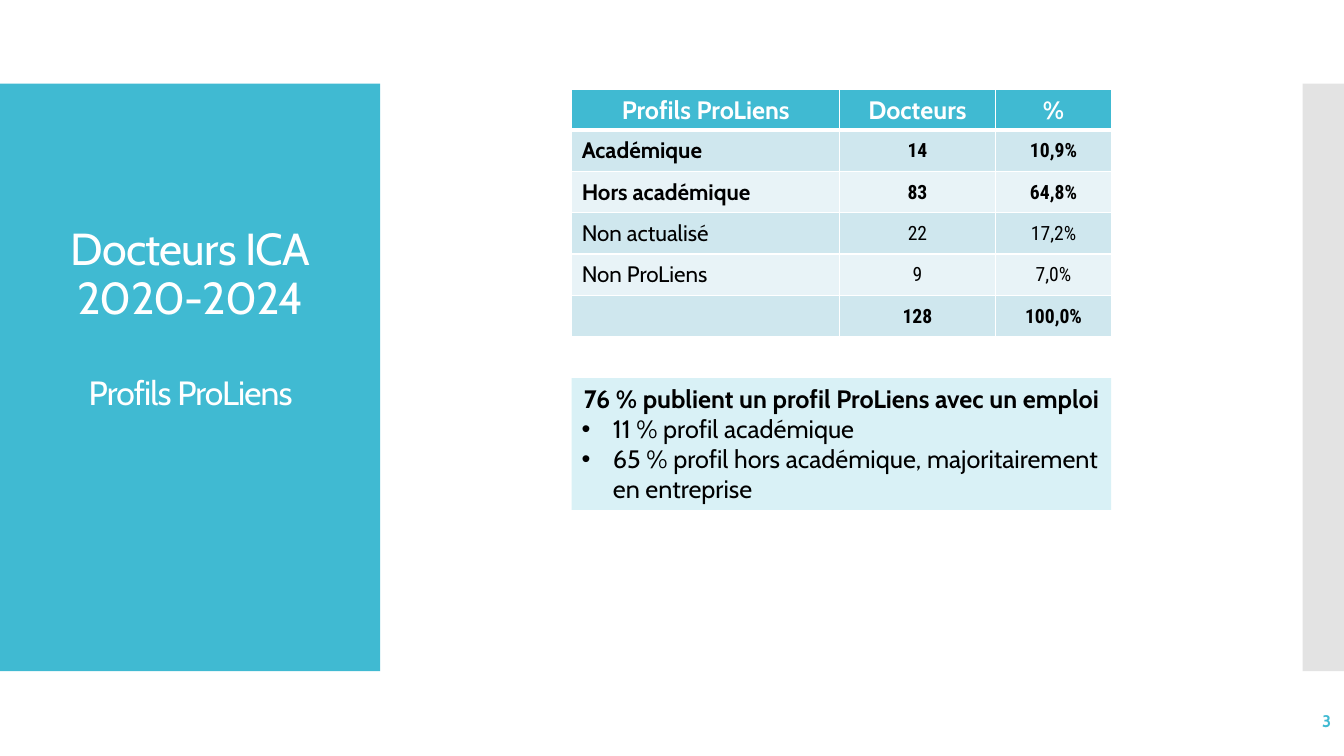
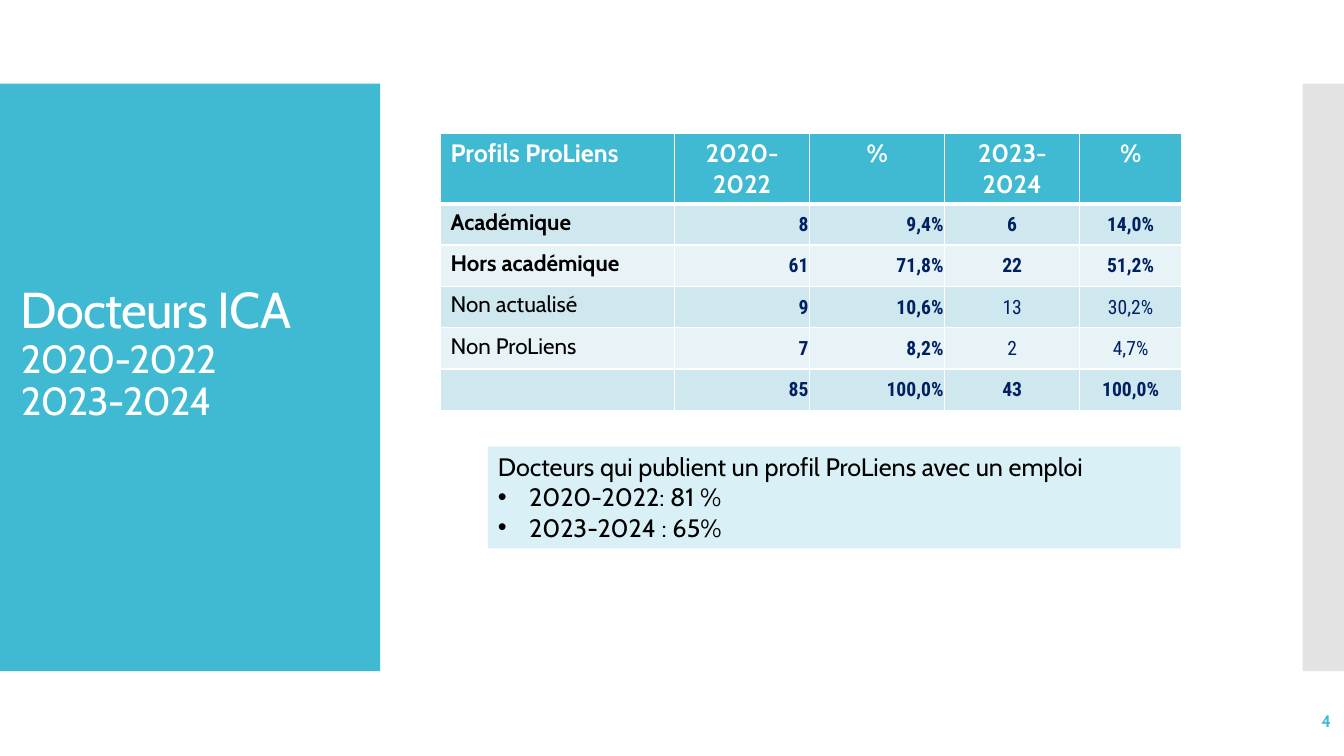
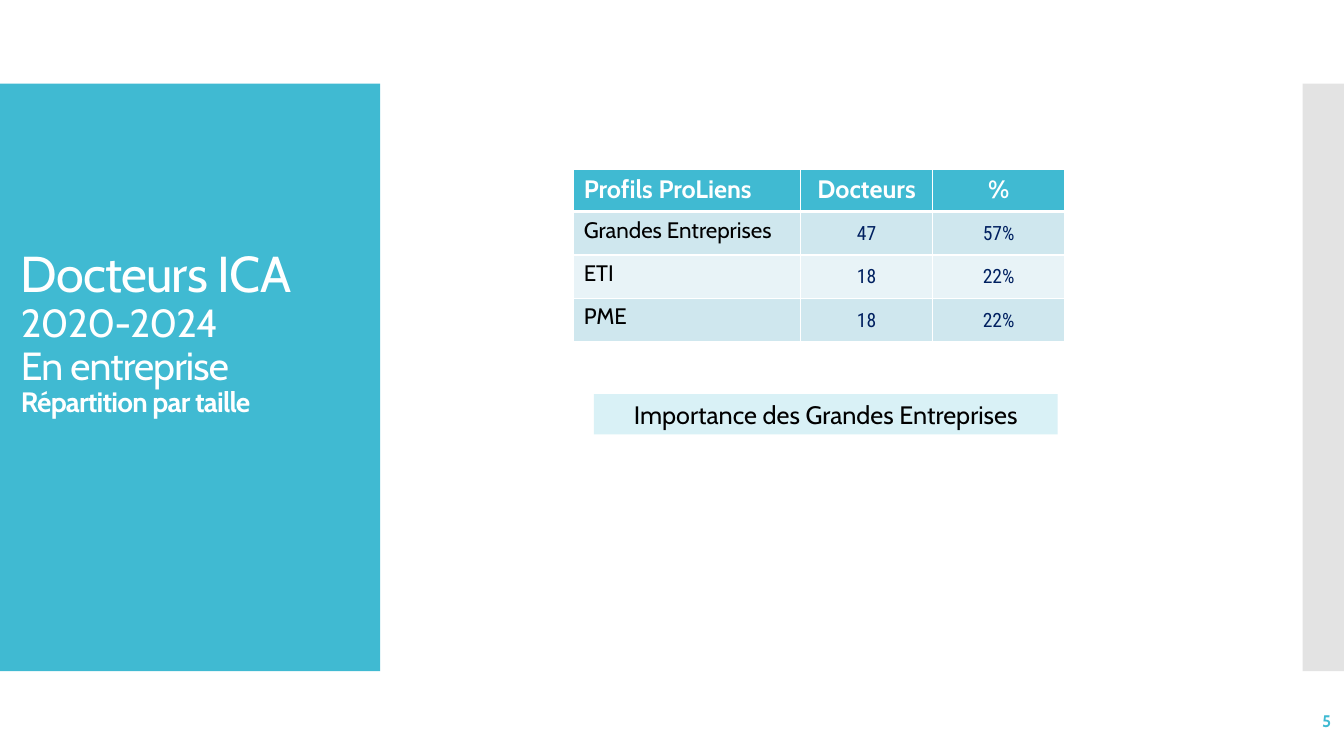
from lxml.etree import SubElement
from pptx import Presentation
from pptx.dml.color import RGBColor
from pptx.enum.shapes import MSO_SHAPE
from pptx.enum.text import MSO_ANCHOR, MSO_AUTO_SIZE, PP_ALIGN
from pptx.oxml.ns import qn
from pptx.util import Inches, Pt

COLORS = {
    "accent": "40BAD2",
    "grey": "C8C8C8",
    "callout": "D9F1F6",
    "band_dark": "CFE7EE",
    "band_light": "E8F3F7",
    "navy": "002060",
    "black": "000000",
    "white": "FFFFFF",
}
TEXT_FONT = "Cabin"
NUMBER_FONT = "Roboto Condensed"
LEFT, CENTER, RIGHT = PP_ALIGN.LEFT, PP_ALIGN.CENTER, PP_ALIGN.RIGHT
TITLE_CENTERED = (0.28, 1.23, 3.22, 5.03)
TITLE_LEFT = (0.11, 1.23, 3.77, 5.03)


def color(name):
    return RGBColor.from_string(COLORS[name])


def lengths(box):
    return [Inches(value) for value in box]


def style(para, size, color_name, bold=False, align=LEFT, font=TEXT_FONT):
    para.alignment = align
    para.font.name = font
    para.font.size = Pt(size)
    para.font.bold = bold
    para.font.color.rgb = color(color_name)


def write_lines(frame, lines):
    for index, line in enumerate(lines):
        para = frame.paragraphs[0] if index == 0 else frame.add_paragraph()
        para.add_run().text = line
        yield para


def add_block(page, box, fill):
    block = page.shapes.add_shape(MSO_SHAPE.RECTANGLE, *lengths(box))
    block.shadow.inherit = False
    block.fill.solid()
    block.fill.fore_color.rgb = color(fill)
    block.line.fill.background()
    return block


def add_text_box(page, box):
    frame = page.shapes.add_textbox(*lengths(box)).text_frame
    frame.word_wrap = True
    frame.vertical_anchor = MSO_ANCHOR.MIDDLE
    return frame


def add_title(page, box, lines, lift, align=LEFT):
    frame = add_text_box(page, box)
    frame.margin_bottom = Inches(0.05 + lift)
    paras = write_lines(frame, [line[0] for line in lines])
    for para, (_, size, bold, gap) in zip(paras, lines):
        style(para, size, "white", bold, align)
        para.line_spacing = 0.9
        para.space_before = Pt(gap)
        para.runs[0].font._element.set("spc", "-60")


def add_page_number(page, number):
    frame = add_text_box(page, (11.63, 6.95, 1.67, 0.4))
    for para in write_lines(frame, [str(number)]):
        style(para, 12, "accent", True, RIGHT)


def add_page(deck, number):
    page = deck.slides.add_slide(deck.slide_layouts[6])
    add_block(page, (0, 0.83, 3.77, 5.83), "accent")
    side_band = add_block(page, (12.92, 0.83, 0.42, 5.83), "grey")
    tint = next(side_band._element.spPr.iter(qn("a:srgbClr")))
    SubElement(tint, qn("a:alpha"), val="50000")
    add_page_number(page, number)
    return page


def set_borders(cell, row):
    properties = cell._tc.get_or_add_tcPr()
    thick_side = {0: "B", 1: "T"}.get(row)
    for side in "LRTB":
        width = Pt(3 if side == thick_side else 1)
        line = SubElement(properties, qn(f"a:ln{side}"), w=str(width))
        fill = SubElement(line, qn("a:solidFill"))
        SubElement(fill, qn("a:srgbClr"), val=COLORS["white"])


def add_data_table(page, box, widths, heights, rows, aligns, bold_rows=(),
                   bold_columns=(), number_color="navy",
                   header_align=LEFT, label_anchor=MSO_ANCHOR.TOP):
    table = page.shapes.add_table(len(rows), len(widths), *lengths(box)).table
    table.horz_banding = False
    for column, width in zip(table.columns, widths):
        column.width = Inches(width)
    for line, height in zip(table.rows, heights):
        line.height = Inches(height)
    for row, values in enumerate(rows):
        band = "accent" if row == 0 else "band_dark" if row % 2 else "band_light"
        for column, value in enumerate(values):
            cell = table.cell(row, column)
            set_borders(cell, row)
            cell.fill.solid()
            cell.fill.fore_color.rgb = color(band)
            cell.text = value
            para = cell.text_frame.paragraphs[0]
            bold = row in bold_rows or column in bold_columns
            if row == 0:
                align = CENTER if column else header_align
                style(para, 18, "white", True, align)
            elif column == 0:
                style(para, 16, "black", bold)
                cell.vertical_anchor = label_anchor
            else:
                style(para, 14, number_color, bold, aligns[column - 1], NUMBER_FONT)
                cell.vertical_anchor = MSO_ANCHOR.MIDDLE
                cell.margin_left = cell.margin_right = cell.margin_top = Inches(0.01)
                cell.margin_bottom = 0


def add_callout(page, box, heading, bullets=(), bold=False, align=LEFT):
    frame = add_block(page, box, "callout").text_frame
    frame.word_wrap = True
    frame.auto_size = MSO_AUTO_SIZE.SHAPE_TO_FIT_TEXT
    frame.vertical_anchor = MSO_ANCHOR.TOP
    for index, para in enumerate(write_lines(frame, [heading, *bullets])):
        if index == 0:
            style(para, 18, "black", bold, align)
            continue
        style(para, 18, "black")
        properties = para._p.get_or_add_pPr()
        indent = Inches(0.31)
        properties.set("marL", str(indent))
        properties.set("indent", str(-indent))
        bullet_font = properties.makeelement(qn("a:buFont"), typeface="Arial")
        bullet = properties.makeelement(qn("a:buChar"), char="•")
        properties.insert(0, bullet_font)
        properties.insert(1, bullet)


def build_overall_profiles(deck, number):
    page = add_page(deck, number)
    add_title(page, TITLE_CENTERED, [
        ("Docteurs ICA", 32, False, 0),
        ("2020-2024", 32, False, 0),
        ("Profils ProLiens", 24, False, 37.5),
    ], 1.14, CENTER)
    add_data_table(page, (5.67, 0.89, 5.35, 2.43), [2.66, 1.54, 1.16],
                   [0.36] + [0.41] * 5, [
        ("Profils ProLiens", "Docteurs", "%"),
        ("Académique", "14", "10,9%"),
        ("Hors académique", "83", "64,8%"),
        ("Non actualisé", "22", "17,2%"),
        ("Non ProLiens", "9", "7,0%"),
        ("", "128", "100,0%"),
    ], [CENTER] * 2, bold_rows=(1, 2, 5), number_color="black",
        header_align=CENTER, label_anchor=MSO_ANCHOR.MIDDLE)
    add_callout(page, (5.67, 3.75, 5.35, 1.31),
                "76 % publient un profil ProLiens avec un emploi",
                ["11 % profil académique",
                 "65 % profil hors académique, majoritairement en entreprise"],
                True, CENTER)


def build_period_comparison(deck, number):
    page = add_page(deck, number)
    add_title(page, TITLE_LEFT, [
        ("Docteurs ICA", 36, False, 0),
        ("2020-2022", 28, False, 0),
        ("2023-2024", 28, False, 0),
    ], 0.45)
    add_data_table(page, (4.37, 1.32, 7.34, 2.43), [2.32, 1.34, 1.34, 1.34, 1.01],
                   [0.36] + [0.41] * 5, [
        ("Profils ProLiens", "2020-2022", "%", "2023-2024", "%"),
        ("Académique", "8", "9,4%", "6", "14,0%"),
        ("Hors académique", "61", "71,8%", "22", "51,2%"),
        ("Non actualisé", "9", "10,6%", "13", "30,2%"),
        ("Non ProLiens", "7", "8,2%", "2", "4,7%"),
        ("", "85", "100,0%", "43", "100,0%"),
    ], [RIGHT, RIGHT, CENTER, CENTER], bold_rows=(1, 2, 5), bold_columns=(1, 2))
    add_callout(page, (4.84, 4.43, 6.87, 1.01),
                "Docteurs qui publient un profil ProLiens avec un emploi",
                ["2020-2022: 81 %", "2023-2024 : 65%"])


def build_company_sizes(deck, number):
    page = add_page(deck, number)
    add_title(page, TITLE_LEFT, [
        ("Docteurs ICA", 36, False, 0),
        ("2020-2024", 28, False, 0),
        ("En entreprise", 28, False, 0),
        ("Répartition par taille", 20, True, 0),
    ], 0.86)
    add_data_table(page, (5.69, 1.68, 4.86, 1.7), [2.25, 1.31, 1.31],
                   [0.42] + [0.43] * 3, [
        ("Profils ProLiens", "Docteurs", "%"),
        ("Grandes Entreprises", "47", "57%"),
        ("ETI", "18", "22%"),
        ("PME", "18", "22%"),
    ], [CENTER] * 2)
    add_callout(page, (5.89, 3.91, 4.6, 0.4),
                "Importance des Grandes Entreprises", align=CENTER)


def main():
    deck = Presentation()
    deck.slide_width, deck.slide_height = Inches(13.33), Inches(7.5)
    builders = [build_overall_profiles, build_period_comparison, build_company_sizes]
    for number, build in enumerate(builders, start=3):
        build(deck, number)
    deck.save("out.pptx")


if __name__ == "__main__":
    main()
